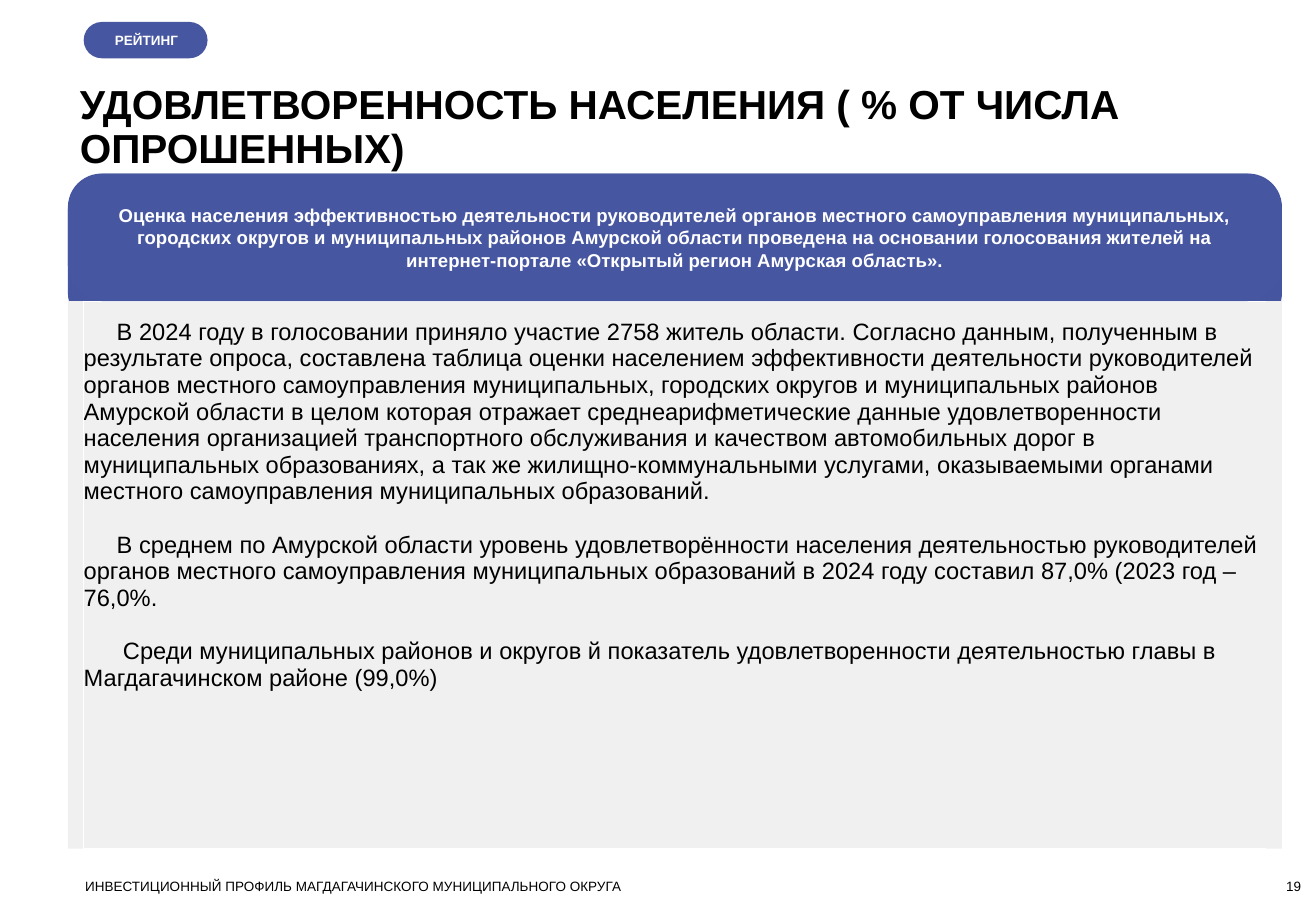
import pptx
import pptx.util
import pptx.dml.color
import pptx.enum.shapes
import pptx.enum.text
import pptx.oxml

Cm = pptx.util.Cm
Pt = pptx.util.Pt
RGB = pptx.dml.color.RGBColor.from_string
ALIGN = pptx.enum.text.PP_ALIGN
ANCHOR = pptx.enum.text.MSO_ANCHOR
SHAPE = pptx.enum.shapes.MSO_SHAPE
COLORS = {"blue": "4756A0", "deep_blue": "46559F", "grey": "F0F0F0",
          "white": "FFFFFF", "black": "000000"}

prs = pptx.Presentation()
prs.slide_width, prs.slide_height = Cm(27.51), Cm(19.05)
s = prs.slides.add_slide(prs.slide_layouts[6])


def write(tf, text, size=8, color="black", bold=False, align=ALIGN.LEFT,
          anchor=ANCHOR.TOP, margins=(0, 0, 0, 0), line=None):
    tf.word_wrap = True
    tf.vertical_anchor = anchor
    tf.margin_left, tf.margin_top, tf.margin_right, tf.margin_bottom = map(Cm, margins)
    p = tf.paragraphs[0]
    p.alignment = align
    p.line_spacing = line
    r = p.add_run()
    r.text = text
    r.font.name, r.font.size, r.font.bold = "Arial", Pt(size), bold
    r.font.color.rgb = RGB(COLORS[color])


def panel(kind, left, top, width, height, color, radius=None):
    sp = s.shapes.add_shape(kind, Cm(left), Cm(top), Cm(width), Cm(height))
    sp.shadow.inherit = False
    sp.fill.solid()
    sp.fill.fore_color.rgb = RGB(COLORS[color])
    sp.line.fill.background()
    if radius is not None:
        sp.adjustments[0] = radius
    return sp


INSET = (0.25, 0.13, 0.25, 0.13)

badge = panel(SHAPE.ROUNDED_RECTANGLE, 1.75, 0.46, 2.59, 0.76, "blue", 0.5)
write(badge.text_frame, "РЕЙТИНГ", color="white", bold=True,
      anchor=ANCHOR.MIDDLE, margins=(0.54, 0, 0, 0))

for box, text, fmt in [
    ((1.78, 18.36, 20.32, 0.33),
     "ИНВЕСТИЦИОННЫЙ ПРОФИЛЬ МАГДАГАЧИНСКОГО МУНИЦИПАЛЬНОГО ОКРУГА", {}),
    ((25.17, 18.36, 2.03, 0.33), "19",
     {"align": ALIGN.RIGHT, "anchor": ANCHOR.BOTTOM}),
    ((1.42, 0.84, 23.72, 3.68),
     "УДОВЛЕТВОРЕННОСТЬ НАСЕЛЕНИЯ ( % ОТ ЧИСЛА ОПРОШЕННЫХ)",
     {"size": 24, "bold": True, "anchor": ANCHOR.MIDDLE, "margins": INSET, "line": 0.9}),
]:
    tb = s.shapes.add_textbox(*map(Cm, box))
    write(tb.text_frame, text, **fmt)

panel(SHAPE.ROUNDED_RECTANGLE, 1.42, 3.63, 25.38, 3.2, "deep_blue", 0.22)
panel(SHAPE.RECTANGLE, 1.42, 6.3, 25.38, 11.45, "grey")

table = s.shapes.add_table(1, 1, Cm(1.75), Cm(6.3), Cm(24.71), Cm(11.45)).table
table.first_row = table.horz_banding = False
cell = table.cell(0, 0)
cell.fill.background()
cell.margin_left = cell.margin_right = cell.margin_bottom = 0
cell.margin_top = Cm(0.37)
tcPr = cell._tc.get_or_add_tcPr()
white_line = f'<a:solidFill><a:srgbClr val="{COLORS["white"]}"/></a:solidFill>'
for i, side in enumerate("LRTB"):
    line_fill = "<a:noFill/>" if side == "R" else white_line
    tcPr.insert(i, pptx.oxml.parse_xml(
        f'<a:ln{side} xmlns:a="http://schemas.openxmlformats.org/drawingml/2006/main" '
        f'w="12700">{line_fill}</a:ln{side}>'))

paragraphs = [
    (0.69, "В 2024 году в голосовании приняло участие 2758 житель области. Согласно данным, "
     "полученным в результате опроса, составлена таблица оценки населением эффективности "
     "деятельности руководителей органов местного самоуправления муниципальных, городских "
     "округов и муниципальных районов Амурской области в целом которая отражает "
     "среднеарифметические данные удовлетворенности населения организацией транспортного "
     "обслуживания и качеством автомобильных дорог в муниципальных образованиях, а так же "
     "жилищно-коммунальными услугами, оказываемыми органами местного самоуправления "
     "муниципальных образований."),
    (0.69, "В среднем по Амурской области уровень удовлетворённости населения деятельностью "
     "руководителей органов местного самоуправления муниципальных образований в 2024 году "
     "составил 87,0% (2023 год – 76,0%."),
    (0.82, "Среди муниципальных районов и округов й показатель удовлетворенности "
     "деятельностью главы в Магдагачинском районе (99,0%)"),
]
tf = cell.text_frame
for i, (indent, text) in enumerate(paragraphs):
    p = tf.add_paragraph() if i else tf.paragraphs[0]
    p.space_before = Pt(16 if i else 0)
    p._p.get_or_add_pPr().set("indent", str(Cm(indent)))
    r = p.add_run()
    r.text = text
    r.font.name, r.font.size = "Arial", Pt(14)
    r.font.color.rgb = RGB(COLORS["black"])

header = panel(SHAPE.ROUNDED_RECTANGLE, 1.42, 3.63, 25.38, 2.67, "blue", 0.29)
write(header.text_frame,
      "Оценка населения эффективностью деятельности руководителей органов местного "
      "самоуправления муниципальных, городских округов и муниципальных районов Амурской "
      "области проведена на основании голосования жителей на интернет-портале "
      "«Открытый регион Амурская область».",
      size=11, color="white", bold=True, align=ALIGN.CENTER,
      anchor=ANCHOR.MIDDLE, margins=INSET)

prs.save("out.pptx")
